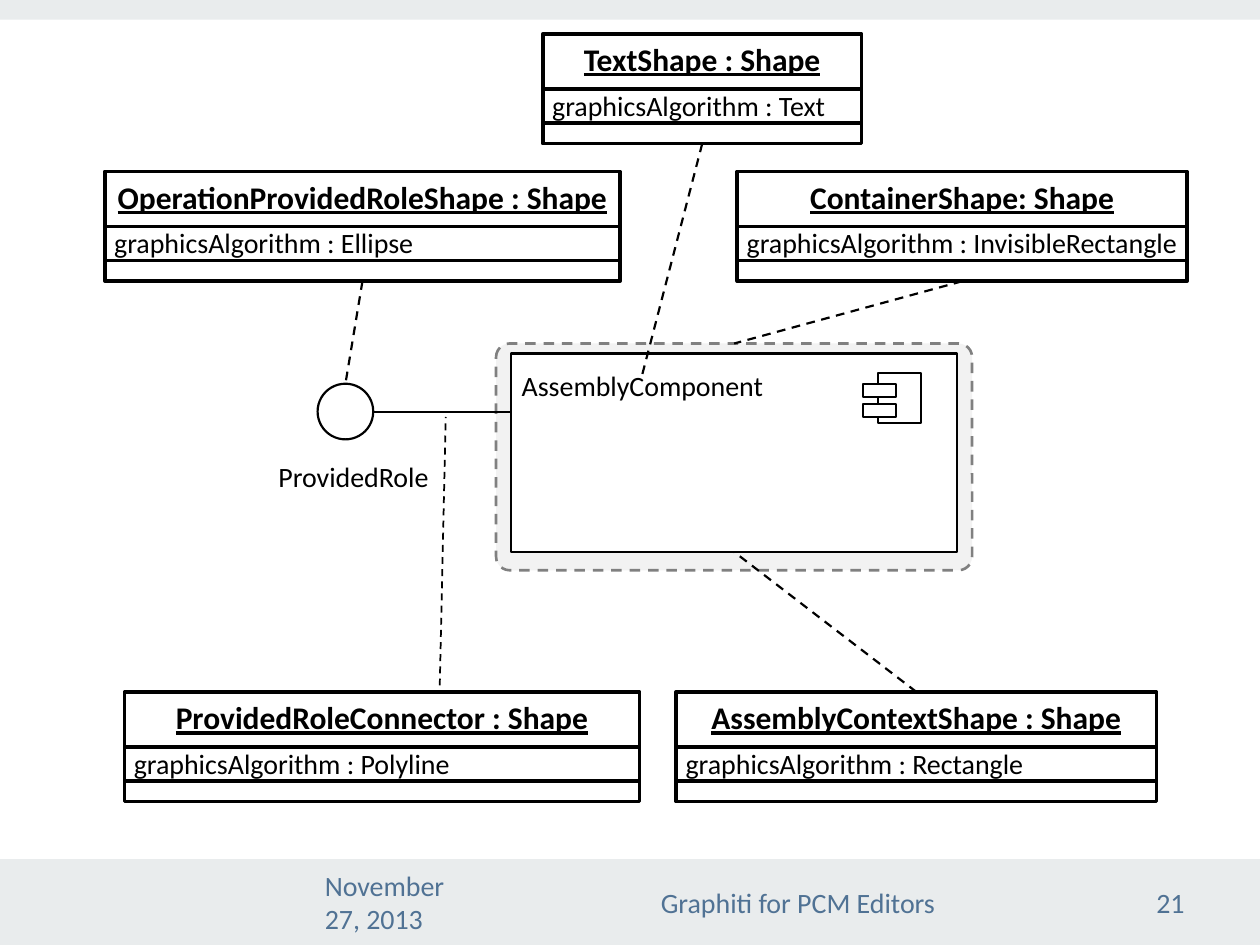
from pptx import Presentation
from pptx.dml.color import RGBColor
from pptx.enum.dml import MSO_LINE
from pptx.enum.shapes import MSO_CONNECTOR, MSO_SHAPE
from pptx.enum.text import MSO_ANCHOR, MSO_AUTO_SIZE, PP_ALIGN
from pptx.oxml.ns import qn
from pptx.util import Pt

BLACK = RGBColor(0x00, 0x00, 0x00)
WHITE = RGBColor(0xFF, 0xFF, 0xFF)
BAND = RGBColor(0xE9, 0xEC, 0xED)
PALE = RGBColor(0xF2, 0xF2, 0xF2)
GRAY = RGBColor(0x80, 0x80, 0x80)
BLUE = RGBColor(0x50, 0x72, 0x94)

CLASS_H = 62.7
FOOTER_Y, FOOTER_H = 501, 28.8


def add_box(shapes, x, y, w, h, fill=WHITE, line=BLACK, width=1.25, kind=MSO_SHAPE.RECTANGLE):
    sp = shapes.add_shape(kind, Pt(x), Pt(y), Pt(w), Pt(h))
    sp.shadow.inherit = False
    sp.fill.solid()
    sp.fill.fore_color.rgb = fill
    if line is None:
        sp.line.fill.background()
    else:
        sp.line.color.rgb = line
        sp.line.width = Pt(width)
    return sp


def add_line(shapes, start, end, width=1.25, dashed=False):
    """Each end is a point (x, y) or a joined site (shape, index)."""
    joins = [not isinstance(e[0], (int, float)) for e in (start, end)]
    x1, y1 = (0, 0) if joins[0] else start
    x2, y2 = (0, 0) if joins[1] else end
    cx = shapes.add_connector(MSO_CONNECTOR.STRAIGHT, Pt(x1), Pt(y1), Pt(x2), Pt(y2))
    if joins[0]:
        cx.begin_connect(*start)
    if joins[1]:
        cx.end_connect(*end)
    cx.line.color.rgb = BLACK
    cx.line.width = Pt(width)
    if dashed:
        cx.line.dash_style = MSO_LINE.DASH
    sp_pr = cx._element.spPr
    sp_pr.append(sp_pr.makeelement(qn("a:effectLst"), {}))
    return cx


def write(tf, text, size=16, color=BLACK, align=PP_ALIGN.LEFT, title=False):
    tf.text = text
    p = tf.paragraphs[0]
    p.alignment = align
    font = p.runs[0].font
    font.name, font.size, font.color.rgb = "Calibri", Pt(size), color
    if title:
        font.bold = font.underline = True


def add_label(shapes, text, x, y, w):
    tf = shapes.add_textbox(Pt(x), Pt(y), Pt(w), Pt(26.6)).text_frame
    tf.word_wrap = False
    tf.auto_size = MSO_AUTO_SIZE.SHAPE_TO_FIT_TEXT
    write(tf, text)


def add_footer(shapes, text, x, w, align):
    tf = shapes.add_textbox(Pt(x), Pt(FOOTER_Y), Pt(w), Pt(FOOTER_H)).text_frame
    tf.word_wrap = True
    tf.vertical_anchor = MSO_ANCHOR.MIDDLE
    write(tf, text, color=BLUE, align=align)


def add_class(shapes, name, algorithm, x, y, w, label_w):
    """Object box with title, attribute and empty compartments."""
    group = shapes.add_group_shape().shapes
    sp = add_box(group, x, y, w, CLASS_H, width=2)
    tf = sp.text_frame
    tf.vertical_anchor = MSO_ANCHOR.TOP
    tf.margin_left = tf.margin_right = Pt(3)
    write(tf, name, 18, align=PP_ALIGN.CENTER, title=True)
    add_line(group, (sp, 1), (sp, 3), 2)
    add_line(group, (x, y + 51), (x + w, y + 51), 2)
    add_label(group, f"graphicsAlgorithm : {algorithm}", x - 1.7, y + 27.4, label_w)
    return sp


def main():
    prs = Presentation()
    prs.slide_width, prs.slide_height = Pt(720), Pt(540)
    s = prs.slides.add_slide(prs.slide_layouts[6])
    shapes = s.shapes

    # Bands and footer
    add_box(shapes, 0, 491, 720, 49, BAND, None)
    add_box(shapes, 0, 0, 720, 11.3, BAND, None)
    add_footer(shapes, "November 27, 2013", 178.5, 102.3, PP_ALIGN.LEFT)
    add_footer(shapes, "Graphiti for PCM Editors", 303, 306, PP_ALIGN.CENTER)
    add_footer(shapes, "21", 638, 46, PP_ALIGN.RIGHT)

    # Container with the assembly component
    container = add_box(shapes, 283.5, 196.3, 272, 129.6, PALE, GRAY, 1.5,
                        MSO_SHAPE.ROUNDED_RECTANGLE)
    container.adjustments[0] = 0.06
    container.line.dash_style = MSO_LINE.DASH
    component = add_box(shapes, 292, 202, 255, 113.4)

    # Component icon
    add_box(shapes, 501.8, 213.1, 24.5, 28.8, width=1)
    for y in (219.5, 230.7):
        add_box(shapes, 493.2, y, 18.7, 7.4, width=1)
    add_label(shapes, "AssemblyComponent", 291, 206.8, 154)

    # Provided role
    role = add_box(shapes, 181.5, 219.3, 31.8, 31.8, kind=MSO_SHAPE.OVAL)
    add_line(shapes, (213.3, 235.3), (292, 235.3))
    add_label(shapes, "ProvidedRole", 152, 258.8, 101.5)

    # Object boxes
    provided = add_class(shapes, "OperationProvidedRoleShape : Shape", "Ellipse",
                         59.9, 98, 294.5, 187.2)
    text = add_class(shapes, "TextShape : Shape", "Text", 310.2, 19.4, 182.2, 172)
    outer = add_class(shapes, "ContainerShape: Shape", "InvisibleRectangle",
                      421.3, 98, 257.1, 331.2)
    add_class(shapes, "ProvidedRoleConnector : Shape", "Polyline", 71.1, 395.4, 294.5, 197.3)
    context = add_class(shapes, "AssemblyContextShape : Shape", "Rectangle",
                        386.4, 395.4, 274.5, 282.2)

    # Dashed links from object boxes to diagram parts
    add_line(shapes, (provided, 2), (role, 0), dashed=True)
    add_line(shapes, (text, 2), (366.5, 216), dashed=True)
    add_line(shapes, (outer, 2), (container, 0), dashed=True)
    add_line(shapes, (context, 0), (component, 2), dashed=True)
    add_line(shapes, (251.3, 391.7), (254.7, 238.3), 1, dashed=True)

    prs.save("out.pptx")


if __name__ == "__main__":
    main()
